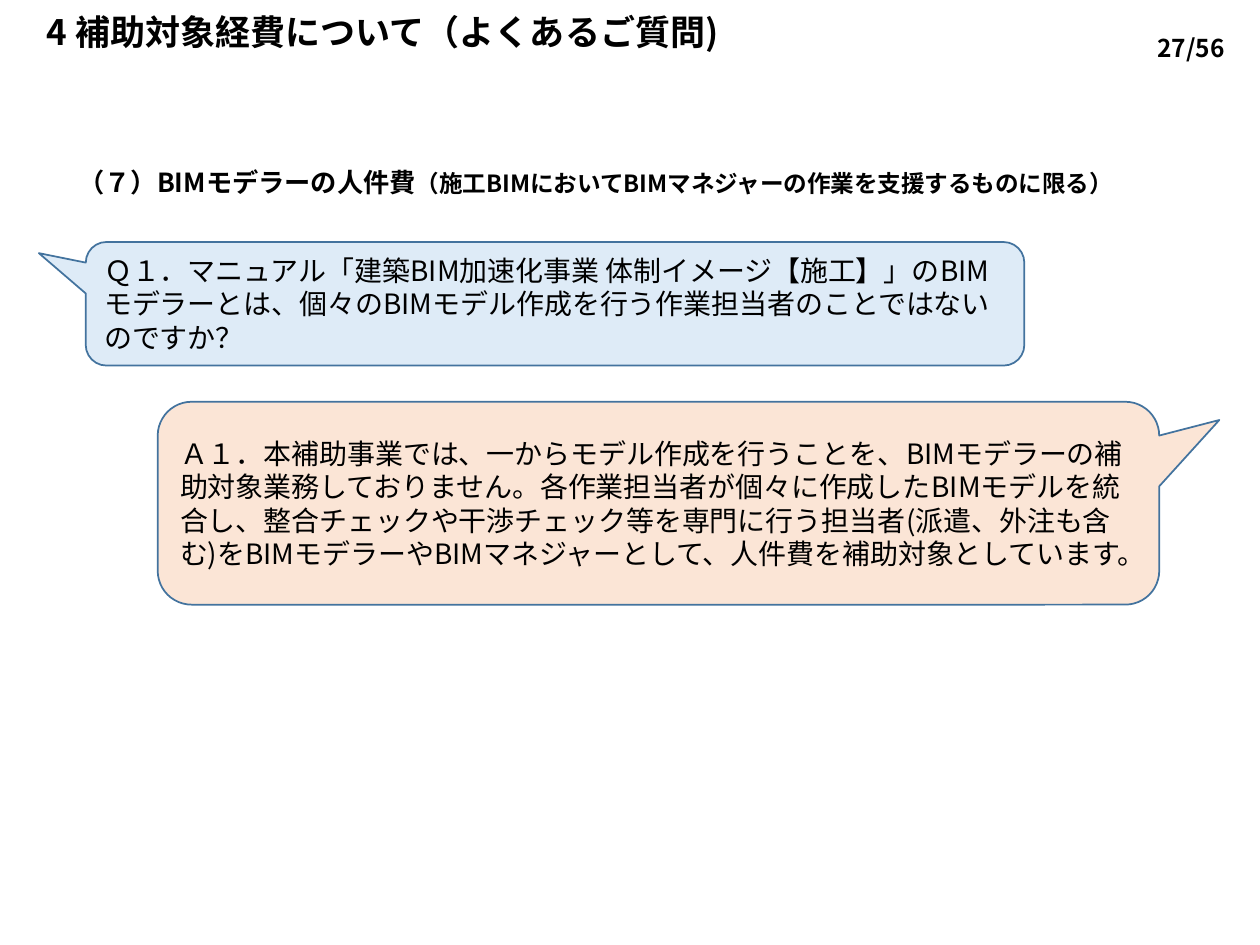
from lxml.etree import SubElement as Sub
from pptx import Presentation
from pptx.dml.color import RGBColor
from pptx.enum.shapes import MSO_SHAPE as Shape
from pptx.enum.text import MSO_ANCHOR as Anchor, PP_ALIGN as Align
from pptx.oxml.ns import qn
from pptx.util import Cm, Pt

FACE = "Noto Sans CJK JP"
BLACK = RGBColor(0x00, 0x00, 0x00)
BLUE = RGBColor(0xDE, 0xEB, 0xF7)
PEACH = RGBColor(0xFB, 0xE5, 0xD6)
EDGE = RGBColor(0x43, 0x73, 0x9E)

ASK = ("Ｑ１．マニュアル「建築BIM加速化事業 体制イメージ【施工】」の"
       "BIMモデラーとは、個々のBIMモデル作成を行う作業担当者のことではないのですか？")
REPLY = ("Ａ１．本補助事業では、一からモデル作成を行うことを、BIMモデラーの補助対象業務しておりません。"
         "各作業担当者が個々に作成したBIMモデルを統合し、整合チェックや干渉チェック等を専門に行う担当者"
         "(派遣、外注も含む)をBIMモデラーやBIMマネジャーとして、人件費を補助対象としています。")


def write(frame, runs, bold=False, align=Align.LEFT, space=None):
    """Fill a text frame with one paragraph of (text, size) runs."""
    frame.word_wrap = True
    para = frame.paragraphs[0]
    para.alignment = align
    para.line_spacing = space
    font = para.font
    font.name, font.bold = FACE, bold
    font.color.rgb = BLACK
    # East Asian glyphs need their own typeface entry
    Sub(para._p.pPr.find(qn("a:defRPr")), qn("a:ea"), typeface=FACE)
    if len(runs) == 1:
        font.size = Pt(runs[0][1])
    for text, size in runs:
        run = para.add_run()
        run.text = text
        if len(runs) > 1:
            run.font.size = Pt(size)


def label(slide, box, runs, anchor=Anchor.MIDDLE, inset=0.25, **style):
    """Add a bold text box."""
    frame = slide.shapes.add_textbox(*map(Cm, box)).text_frame
    frame.vertical_anchor = anchor
    frame.margin_left = Cm(inset)
    write(frame, runs, bold=True, **style)


def bubble(slide, box, tip, fill, text):
    """Add a rounded speech bubble whose tail ends at tip."""
    shape = slide.shapes.add_shape(Shape.ROUNDED_RECTANGULAR_CALLOUT, *map(Cm, box))
    shape.shadow.inherit = False
    for i, value in enumerate((*tip, 0.167)):
        shape.adjustments[i] = value
    shape.fill.solid()
    shape.fill.fore_color.rgb = fill
    shape.line.color.rgb = EDGE
    shape.line.width = Pt(1)
    shape.text_frame.vertical_anchor = Anchor.MIDDLE
    write(shape.text_frame, [(text, 16)])


def main():
    deck = Presentation()
    deck.slide_width, deck.slide_height = Cm(25.4), Cm(19.05)
    slide = deck.slides.add_slide(deck.slide_layouts[6])

    # Title, section heading and page number
    label(slide, (0.69, 0, 20.62, 1.37),
          [("4 補助対象経費について（よくあるご質問)", 20)], space=0.9)
    label(slide, (0.69, 3.3, 24, 13.84),
          [("（７）BIMモデラーの人件費", 15),
           ("（施工BIMにおいてBIMマネジャーの作業を支援するものに限る）", 13.5)],
          anchor=Anchor.TOP, inset=0.89, space=0.9)
    label(slide, (22.63, 0, 2.77, 1.09), [("27/56", 14)],
          align=Align.CENTER, space=Pt(40))

    # Question and answer
    bubble(slide, (1.73, 4.88, 18.92, 2.49), (-0.55, -0.41), BLUE, ASK)
    bubble(slide, (3.18, 8.1, 20.19, 4.09), (0.56, -0.41), PEACH, REPLY)

    deck.save("out.pptx")


if __name__ == "__main__":
    main()
